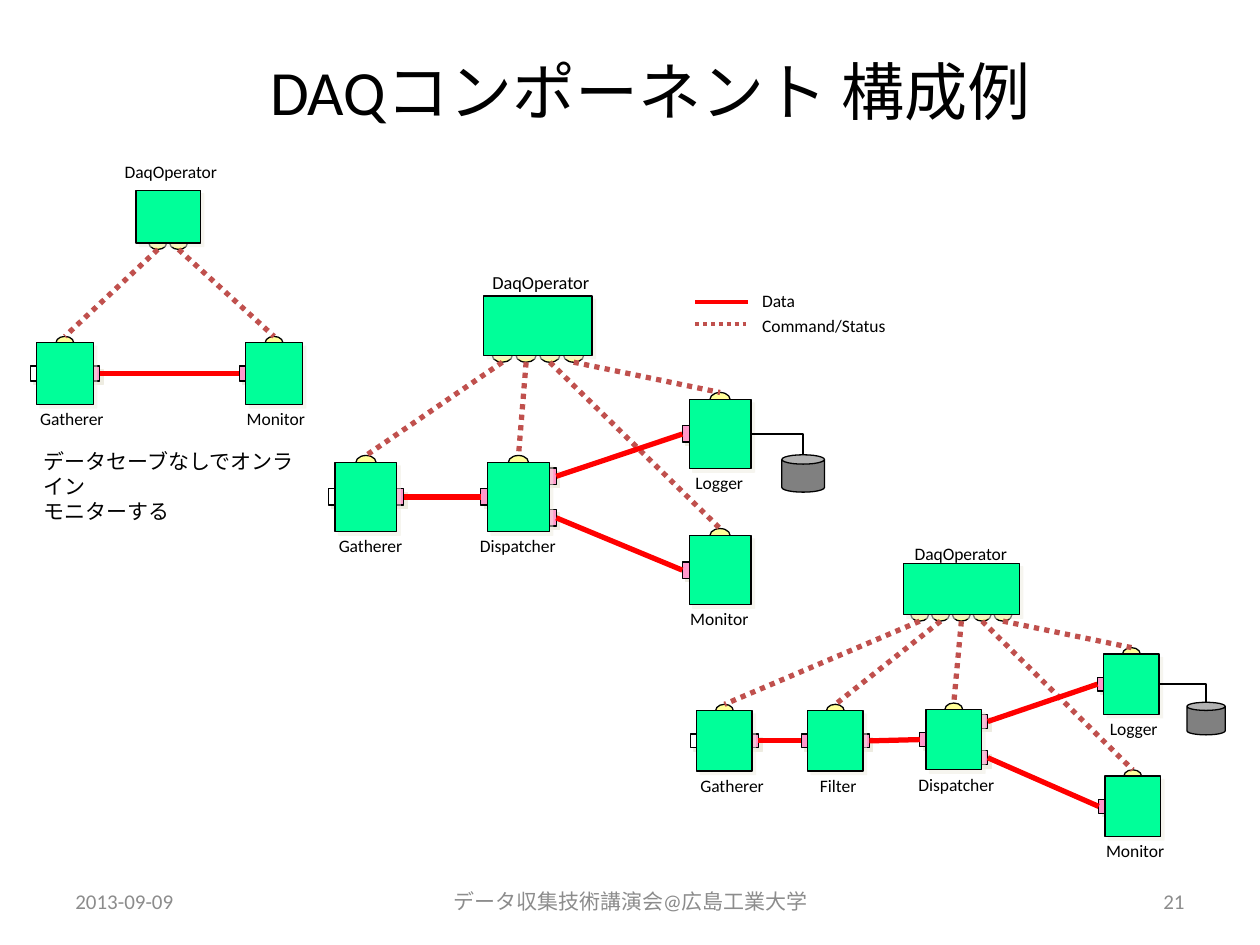
from collections import namedtuple
from pptx import Presentation
from pptx.dml.color import RGBColor
from pptx.enum.dml import MSO_LINE as Dash
from pptx.enum.shapes import MSO_CONNECTOR as Connector, MSO_SHAPE as Shape
from pptx.enum.text import MSO_ANCHOR as Anchor, MSO_AUTO_SIZE as AutoSize, PP_ALIGN as Align
from pptx.oxml import parse_xml
from pptx.oxml.ns import nsdecls
from pptx.util import Inches, Pt

BLACK = RGBColor(0x00, 0x00, 0x00)
WHITE = RGBColor(0xFF, 0xFF, 0xFF)
GRAY = RGBColor(0x8C, 0x8C, 0x8C)
DISK = RGBColor(0x80, 0x80, 0x80)
GREEN = RGBColor(0x00, 0xFF, 0x99)
PINK = RGBColor(0xFF, 0x99, 0xCC)
YELLOW = RGBColor(0xFF, 0xFF, 0x99)
RED = RGBColor(0xFF, 0x00, 0x00)
BRICK = RGBColor(0xC0, 0x50, 0x4D)
SHADOW = RGBColor(0xEE, 0xEC, 0xE1)

COLUMNS, ROWS = 100, 75
Box = namedtuple("Box", "left top width height")
Scale = namedtuple("Scale", "body port knob")

# Label width and shift from the left edge of its component, in columns
LABELS = {
    "Gatherer": (7.2, -0.7),
    "Filter": (5, 0),
    "Dispatcher": (8.1, -1.6),
    "Logger": (5.9, -0.5),
    "Monitor": (6.7, -0.9),
}


class DaqSlide:
    font_name = "Calibri"

    def __init__(self, presentation):
        self.column = presentation.slide_width / COLUMNS
        self.row = presentation.slide_height / ROWS
        self.slide = presentation.slides.add_slide(presentation.slide_layouts[6])
        self.shapes = self.slide.shapes

    def place(self, *lengths):
        units = (self.column, self.row, self.column, self.row)
        return [round(length * unit) for length, unit in zip(lengths, units)]

    def start_group(self):
        self.shapes = self.slide.shapes.add_group_shape().shapes

    def end_group(self):
        self.shapes = self.slide.shapes

    def text(self, box, lines, size=10, color=BLACK, align=Align.LEFT, **frame_format):
        frame = self.shapes.add_textbox(*self.place(*box)).text_frame
        for name, value in frame_format.items():
            setattr(frame, name, value)
        for index, line in enumerate(lines):
            paragraph = frame.paragraphs[0] if index == 0 else frame.add_paragraph()
            paragraph.text = line
            paragraph.alignment = align
            for name, value in {"name": self.font_name, "size": Pt(size)}.items():
                setattr(paragraph.font, name, value)
            paragraph.font.color.rgb = color

    def label(self, left, top, width, words, size=10):
        self.text((left, top, width, 2.7), [words], size,
                  word_wrap=False, auto_size=AutoSize.SHAPE_TO_FIT_TEXT)

    def solid(self, kind, box, color, shadow_alpha=0):
        shape = self.shapes.add_shape(kind, *self.place(*box))
        shape.shadow.inherit = False
        shape.fill.solid()
        shape.fill.fore_color.rgb = color
        shape.line.color.rgb = BLACK
        shape.line.width = Pt(0.75)
        if shadow_alpha:
            shape._element.spPr.find(".//{*}effectLst").append(parse_xml(
                f'<a:outerShdw {nsdecls("a")} dist="{Pt(2.8)}" dir="2700000">'
                f'<a:srgbClr val="{SHADOW}"><a:alpha val="{shadow_alpha * 1000}"/>'
                '</a:srgbClr></a:outerShdw>'))

    def line(self, start, end, color, width=3, dash=None, bent=False):
        kind = Connector.ELBOW if bent else Connector.STRAIGHT
        connector = self.shapes.add_connector(kind, *self.place(*start, *end))
        properties = connector._element.spPr
        if bent:
            properties.find("{*}prstGeom").set("prst", "bentConnector2")
        for name, value in {"width": Pt(width), "dash_style": dash}.items():
            setattr(connector.line, name, value)
        connector.line.color.rgb = color
        properties.append(parse_xml(f'<a:effectLst {nsdecls("a")}/>'))

    def port(self, scale, x, y, color=PINK):
        width, height = scale.port
        self.solid(Shape.RECTANGLE, (x - width / 2, y - height / 2, width, height), color, 100)

    def knob(self, scale, x, y):
        width, height = scale.knob
        self.solid(Shape.OVAL, (x - width / 2, y - height / 2, width, height), YELLOW)

    def component(self, scale, name, left, top, outputs):
        """Draw a component; return its command, input and output points."""
        width, height = scale.body
        right, center, middle = left + width, left + width / 2, top + height / 2
        reach = scale.port[0] / 2
        output_rows = [top + height * share for share in outputs]
        self.port(scale, left, middle, WHITE if name == "Gatherer" else PINK)
        for y in output_rows:
            self.port(scale, right, y)
        self.knob(scale, center, top)
        self.solid(Shape.RECTANGLE, (left, top, width, height), GREEN, 50)
        label_width, shift = LABELS[name]
        self.label(left + shift, top + height - 0.2, label_width, name)
        if name == "Logger":
            disk = Box(right + width * 0.5, top + height * 0.8, width * 0.69, height * 0.54)
            self.solid(Shape.CAN, disk, DISK)
            self.line((right, middle), (disk.left + disk.width / 2, disk.top),
                      BLACK, 0.75, bent=True)
        return ((center, top - scale.knob[1] / 2), (left - reach, middle),
                [(right + reach, y) for y in output_rows])

    def operator(self, scale, box, count):
        """Draw the operator; return the points its commands leave from."""
        pitch = scale.knob[0] * 1.18
        first = box.left + box.width / 2 - pitch * (count - 1) / 2
        bottom = box.top + box.height
        centers = [first + pitch * index for index in range(count)]
        for x in centers:
            self.knob(scale, x, bottom)
        self.solid(Shape.RECTANGLE, box, GREEN, 50)
        return [(x, bottom + scale.knob[1] / 2) for x in centers]

    def system(self, scale, operator_box, operator_label, components, links):
        """Components are (name, left, top, outputs); links are (from, output, to)."""
        self.label(*operator_label)
        sources = self.operator(scale, operator_box, len(components))
        parts = [self.component(scale, *component) for component in components]
        for source, (command, _, _) in zip(sources, parts):
            self.line(source, command, BRICK, dash=Dash.ROUND_DOT)
        for sender, output, receiver in links:
            self.line(parts[sender][2][output], parts[receiver][1], RED)


def main():
    presentation = Presentation()
    presentation.slide_width, presentation.slide_height = Inches(10), Inches(7.5)
    page = DaqSlide(presentation)
    single, split = [0.5], [0.2, 0.8]

    # Title
    page.text((6.7, 2.1, 89.8, 10.2), ["DAQコンポーネント 構成例"], 36, align=Align.CENTER,
              word_wrap=True, vertical_anchor=Anchor.MIDDLE)

    # Online monitoring without saving
    page.start_group()
    page.system(
        Scale((4.5, 4.9), (1, 1.2), (1.4, 1)), Box(10.8, 15.1, 5.1, 4.2),
        (8.9, 12.3, 9.5, "DaqOperator"),
        [("Gatherer", 2.9, 27.2, single), ("Monitor", 19.5, 27.2, [])],
        [(0, 0, 1)])
    page.text((2.5, 35.1, 22.8, 5), ["データセーブなしでオンライン", "モニターする"], 12,
              word_wrap=True)

    # Logging and monitoring, with the legend
    page.start_group()
    page.system(
        Scale((4.9, 5.5), (1.1, 1.3), (1.6, 1.1)), Box(38.4, 23.5, 8.6, 4.7),
        (38.1, 21, 9.9, "DaqOperator", 10.5),
        [("Gatherer", 26.6, 36.7, single), ("Dispatcher", 38.7, 36.7, split),
         ("Monitor", 54.7, 42.5, []), ("Logger", 54.7, 31.7, [])],
        [(0, 0, 1), (1, 0, 3), (1, 1, 2)])
    legend = [("Data", 5, 24, 22.5, RED, None),
              ("Command/Status", 12, 25.7, 24.5, BRICK, Dash.ROUND_DOT)]
    for words, width, line_top, text_top, color, dash in legend:
        page.line((55.2, line_top), (59.4, line_top), color, 2.25, dash)
        page.label(59.5, text_top, width, words)

    # Logging and monitoring behind a filter
    page.start_group()
    page.system(
        Scale((4.4, 4.8), (1, 1.1), (1.4, 1)), Box(71.7, 44.7, 9.2, 4.1),
        (71.6, 42.6, 9.5, "DaqOperator"),
        [("Gatherer", 55.3, 56.4, single), ("Filter", 64.1, 56.4, single),
         ("Dispatcher", 73.5, 56.3, split), ("Monitor", 87.7, 61.6, []),
         ("Logger", 87.6, 51.9, [])],
        [(0, 0, 1), (1, 0, 2), (2, 0, 4), (2, 1, 3)])
    page.end_group()

    # Footer
    footer = [(5, 23.3, "2013-09-09", Align.LEFT),
              (34.2, 31.7, "データ収集技術講演会@広島工業大学", Align.CENTER),
              (71.7, 23.3, "21", Align.RIGHT)]
    for left, width, words, align in footer:
        page.text((left, 69.5, width, 4), [words], 12, GRAY, align,
                  word_wrap=True, vertical_anchor=Anchor.MIDDLE)

    presentation.save("out.pptx")


if __name__ == "__main__":
    main()
